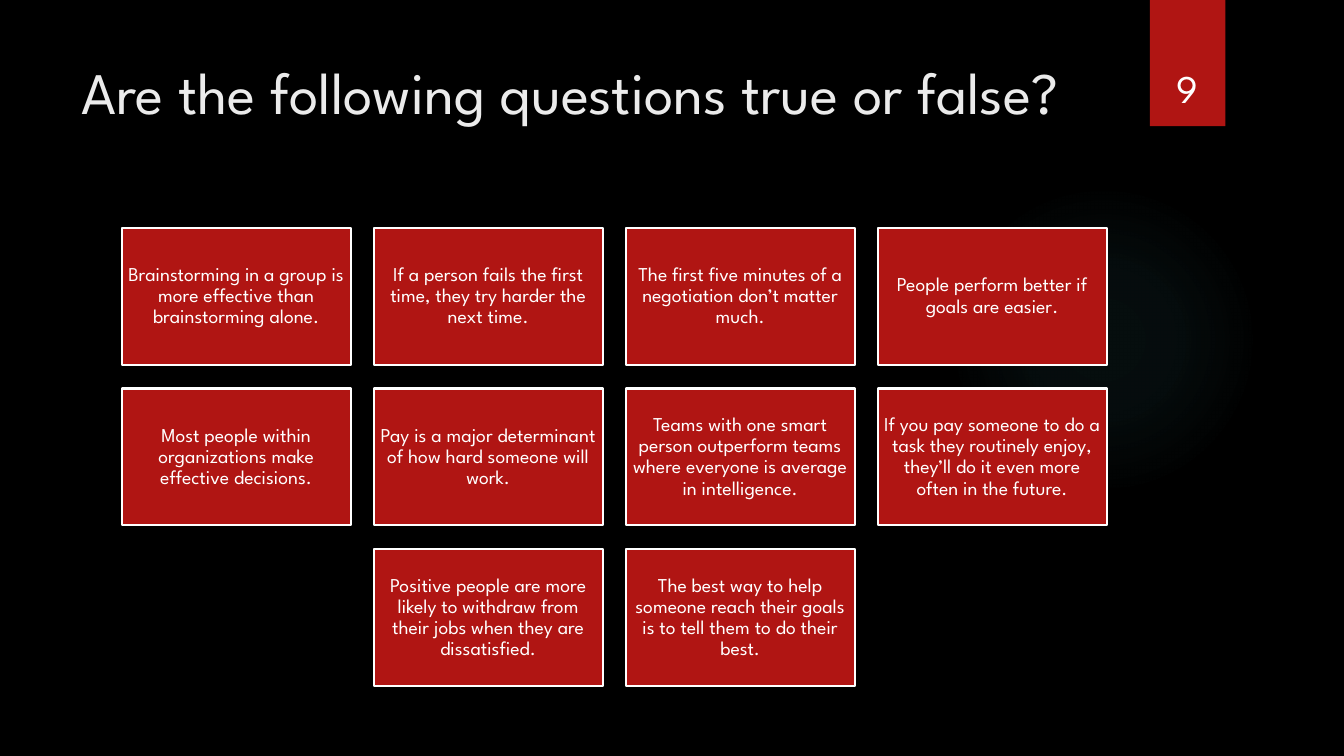
from lxml import etree
from pptx import Presentation
from pptx.dml.color import RGBColor
from pptx.enum import shapes, text
from pptx.oxml import parse_xml
from pptx.oxml.ns import nsdecls
from pptx.util import Cm, Pt

BLACK = RGBColor(0x00, 0x00, 0x00)
RED = RGBColor(0xB0, 0x15, 0x13)
WHITE = RGBColor(0xFF, 0xFF, 0xFF)
PALE = RGBColor(0xEB, 0xEB, 0xEB)
TEAL = RGBColor(0x50, 0xB9, 0xC1)
FONT = "League Spartan"

STATEMENTS = [
    ["Brainstorming in a group is more effective than brainstorming alone.",
     "If a person fails the first time, they try harder the next time.",
     "The first five minutes of a negotiation don’t matter much.",
     "People perform better if goals are easier."],
    ["Most people within organizations make effective decisions.",
     "Pay is a major determinant of how hard someone will work.",
     "Teams with one smart person outperform teams where everyone is average in intelligence.",
     "If you pay someone to do a task they routinely enjoy, they’ll do it even more often in the future."],
    ["Positive people are more likely to withdraw from their jobs when they are dissatisfied.",
     "The best way to help someone reach their goals is to tell them to do their best."],
]
COLUMNS = 4
GRID_LEFT, GRID_TOP = 3.07, 5.74
CARD_WIDTH, CARD_HEIGHT = 5.77, 3.45
COLUMN_STEP, ROW_STEP = 6.35, 4.05


def add_plain_shape(kind, left, top, width, height):
    """Add a red shape with neither outline nor shadow; lengths in cm."""
    shape = page.shapes.add_shape(kind, Cm(left), Cm(top), Cm(width), Cm(height))
    shape.shadow.inherit = False
    shape.fill.solid()
    shape.fill.fore_color.rgb = RED
    shape.line.fill.background()
    return shape


def write(shape, words, size, color, align, anchor):
    frame = shape.text_frame
    frame.word_wrap = True
    frame.vertical_anchor = anchor
    para = frame.paragraphs[0]
    para.text = words
    para.alignment = align
    para.font.name = FONT
    para.font.size = Pt(size)
    para.font.color.rgb = color
    return para


deck = Presentation()
deck.slide_width, deck.slide_height = Cm(33.87), Cm(19.05)
page = deck.slides.add_slide(deck.slide_layouts[6])
page.background.fill.solid()
page.background.fill.fore_color.rgb = BLACK

# Soft glow: a radial gradient that fades to fully transparent
glow = add_plain_shape(shapes.MSO_SHAPE.OVAL, 23.9, 4.65, 7.82, 7.82)
stops = "".join(
    f'<a:gs pos="{place * 1000}"><a:srgbClr val="{TEAL}">'
    f'<a:alpha val="{opacity * 1000}"/></a:srgbClr></a:gs>'
    for place, opacity in [(0, 7), (36, 6), (69, 0)])
gradient = parse_xml(
    f'<a:gradFill {nsdecls("a")}><a:gsLst>{stops}</a:gsLst><a:path path="circle">'
    '<a:fillToRect l="50000" t="50000" r="50000" b="50000"/></a:path></a:gradFill>')
solid = glow.fill._xPr.solidFill if hasattr(glow.fill._xPr, "solidFill") else glow.fill._xPr.eg_fillProperties
solid.getparent().replace(solid, gradient)

# Page number on its ribbon
ribbon = add_plain_shape(shapes.MSO_SHAPE.RECTANGLE, 28.98, 0, 1.9, 3.18)
effects = ribbon._element.spPr.find("{*}effectLst")
shadow = etree.SubElement(effects, effects.tag.replace("effectLst", "outerShdw"),
                          blurRad=str(Pt(3)), dist=str(Pt(2)), dir="5400000")
shadow.append(parse_xml(
    f'<a:srgbClr {nsdecls("a")} val="{BLACK}"><a:alpha val="45000"/></a:srgbClr>'))
number = page.shapes.add_textbox(Cm(28.75), Cm(0.81), Cm(2.34), Cm(2.13))
write(number, "9", 28, WHITE, text.PP_ALIGN.CENTER, text.MSO_ANCHOR.BOTTOM)

title = page.shapes.add_textbox(Cm(1.8), Cm(1.27), Cm(26.14), Cm(3.89))
write(title, "Are the following questions true or false?", 42, PALE,
      text.PP_ALIGN.LEFT, text.MSO_ANCHOR.TOP)

# Statement cards, each row centred on the grid
for row, statements in enumerate(STATEMENTS):
    first_column = (COLUMNS - len(statements)) / 2
    for column, statement in enumerate(statements, 1):
        card = add_plain_shape(
            shapes.MSO_SHAPE.RECTANGLE,
            GRID_LEFT + (first_column + column - 1) * COLUMN_STEP,
            GRID_TOP + row * ROW_STEP, CARD_WIDTH, CARD_HEIGHT)
        card.line.color.rgb = WHITE
        card.line.width = Pt(1.5)
        frame = card.text_frame
        frame.margin_left = frame.margin_right = Cm(0.15)
        frame.margin_top = frame.margin_bottom = Cm(0.15)
        para = write(card, statement, 14, WHITE,
                     text.PP_ALIGN.CENTER, text.MSO_ANCHOR.MIDDLE)
        para.line_spacing = 0.9

deck.save("out.pptx")
